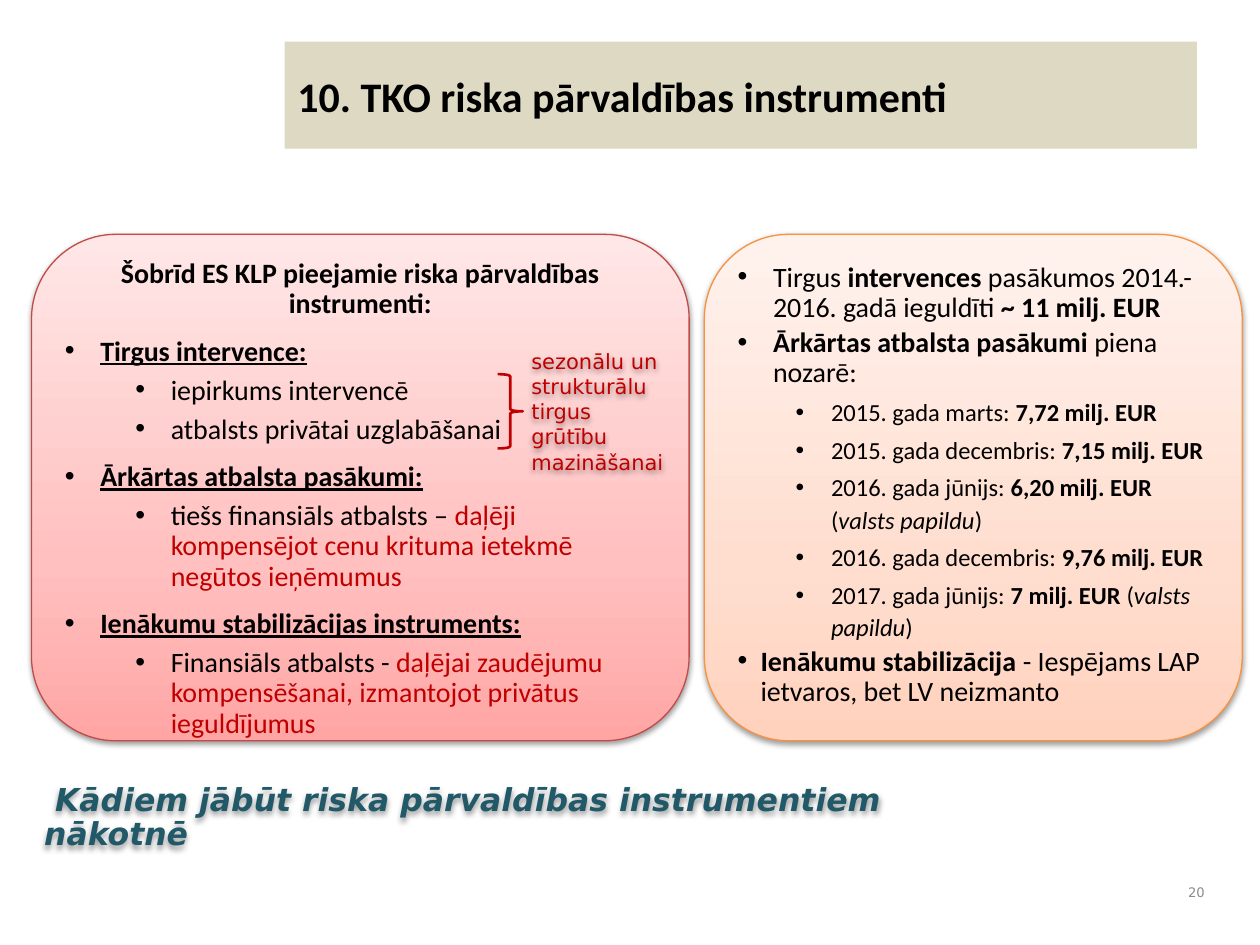
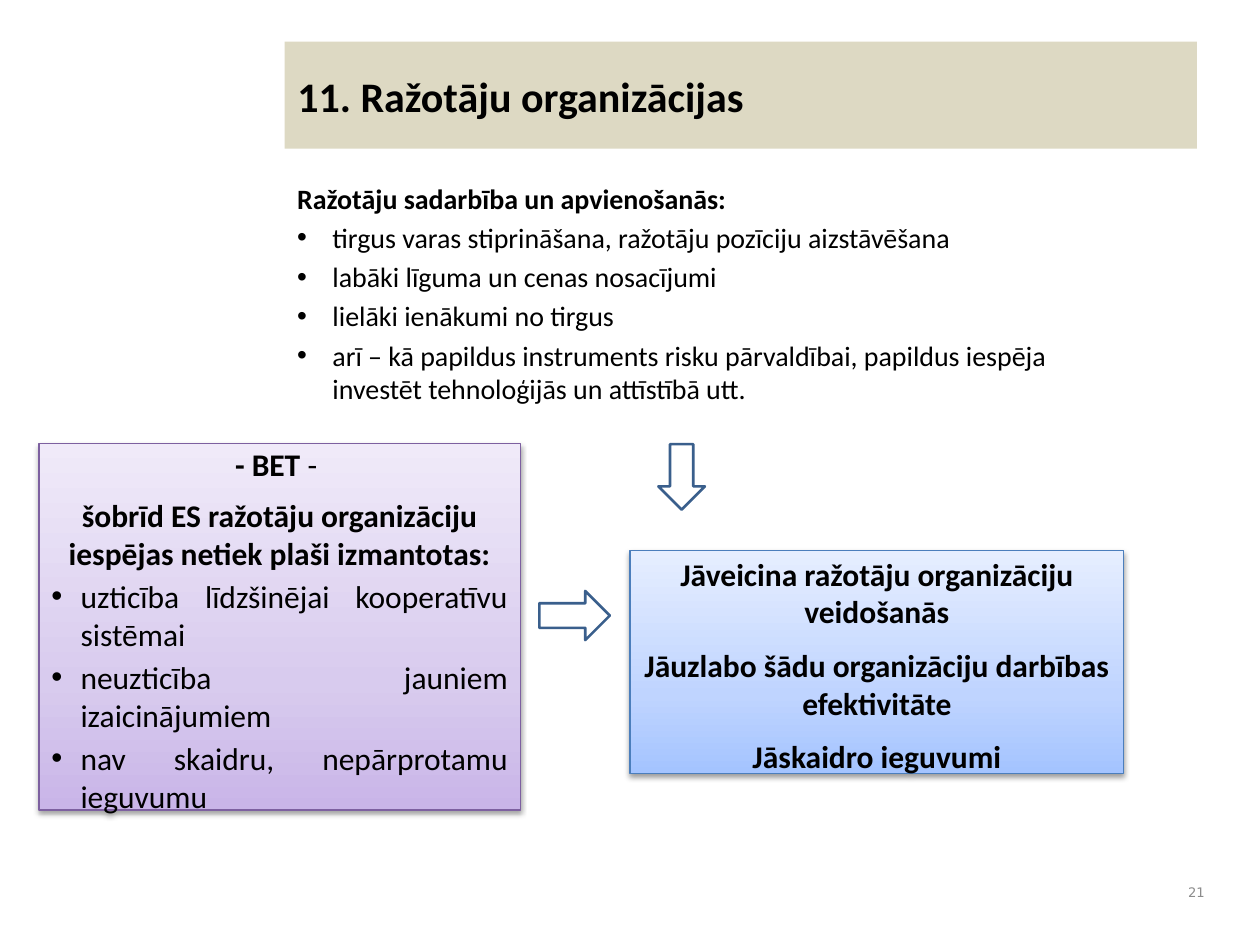
from copy import deepcopy

from lxml import etree
from pptx import Presentation
from pptx.dml.color import RGBColor
from pptx.enum import shapes, text
from pptx.oxml import ns
from pptx.util import Pt

KIND = shapes.MSO_SHAPE
ALIGN = text.PP_ALIGN
ANCHOR = text.MSO_ANCHOR

BLACK, RED, TEAL, GREY = "000000", "C00000", "215968", "8C8C8C"
SAND, NAVY = "DDD9C3", "3A5F8C"
BODY, PLAIN = "Calibri", "DejaVu Sans"

# Each tint: outline, then gradient colours from bottom to top
ROSE = ("BF4C48", "FFA6A5", "FFC0BF", "FFE7E7")
PEACH = ("F69240", "FFD2BD", "FFDED0", "FFF2ED")
LILAC = ("7D60A0", "C9B5E8", "D8CBEE", "F0EAF9")
SKY = ("4B7EBC", "A4C4FF", "BFD4FF", "E6EEFF")


def rgb(code):
    return RGBColor.from_string(code)


def add(parent, tag, **attrs):
    return etree.SubElement(parent, ns.qn(tag), attrs)


class Deck:
    def __init__(self):
        self.prs = Presentation()
        self.prs.slide_width, self.prs.slide_height = Pt(720), Pt(540)
        self.slide = None

    def start(self, title, number):
        """Open a slide with its title band and page number."""
        self.slide = self.prs.slides.add_slide(self.prs.slide_layouts[5])
        band = self.slide.shapes.title
        band.left, band.top, band.width, band.height = map(Pt, (162.7, 23.8, 521.3, 61.2))
        band.fill.solid()
        band.fill.fore_color.rgb = rgb(SAND)
        self.frame(band, anchor=ANCHOR.MIDDLE)
        self.para(band, title, size=24, bold=True)
        page = self.box(671.8, 498.2, 23.8, 23.8, (0, 3.6, 7.2, 3.6), ANCHOR.MIDDLE)
        self.para(page, str(number), size=7.5, font=PLAIN, color=GREY, align=ALIGN.RIGHT)

    def frame(self, shape, pad=(7.2, 3.6, 7.2, 3.6), anchor=ANCHOR.TOP):
        tf = shape.text_frame
        tf.word_wrap = True
        tf.auto_size = text.MSO_AUTO_SIZE.NONE
        tf.vertical_anchor = anchor
        tf.margin_left, tf.margin_top, tf.margin_right, tf.margin_bottom = map(Pt, pad)

    def box(self, x, y, w, h, *look):
        shape = self.slide.shapes.add_textbox(Pt(x), Pt(y), Pt(w), Pt(h))
        self.frame(shape, *look)
        return shape

    def shape(self, kind, x, y, w, h, line=None, turn=0):
        """Add an unfilled preset shape."""
        shape = self.slide.shapes.add_shape(kind, Pt(x), Pt(y), Pt(w), Pt(h))
        shape.shadow.inherit = False
        shape.rotation = turn
        shape.fill.background()
        if line:
            shape.line.color.rgb = rgb(line)
            shape.line.width = Pt(1.5)
        else:
            shape.line.fill.background()
        return shape

    def shade(self, shape):
        """Cast a soft shadow straight down."""
        effects = shape._element.spPr.find(ns.qn("a:effectLst"))
        outer = add(effects, "a:outerShdw", blurRad="40000", dist="20000",
                    dir="5400000", rotWithShape="0")
        add(add(outer, "a:srgbClr", val=BLACK), "a:alpha", val="38000")

    def panel(self, kind, x, y, w, h, tint, *look):
        """Add a shadowed shape with a three-stop gradient."""
        shape = self.shape(kind, x, y, w, h)
        edge, *tones = tint
        shape.line.color.rgb = rgb(edge)
        shape.line.width = Pt(0.75)
        shape.fill.gradient()
        shape.fill.gradient_angle = 90
        stops = shape._element.spPr.find(".//" + ns.qn("a:gsLst"))
        stops.insert(1, deepcopy(stops[0]))
        for stop, place, tone in zip(shape.fill.gradient_stops, (0, 0.35, 1), tones):
            stop.position = place
            stop.color.rgb = rgb(tone)
        self.shade(shape)
        self.frame(shape, *look)
        return shape

    def note(self, x, y, w, h, words, *look, **style):
        """Add shadowed text in an invisible rounded box."""
        shape = self.shape(KIND.ROUNDED_RECTANGLE, x, y, w, h)
        self.shade(shape)
        self.frame(shape, *look)
        self.para(shape, words, font=PLAIN, **style)

    def para(self, shape, words, size=16, font=BODY, color=BLACK, bold=False,
             italic=False, under=False, align=ALIGN.LEFT, left=0, hang=0,
             lead=1.0, before=0, after=0):
        """Add a paragraph; | parts runs, which open with * bold, _ italic, ^ red."""
        tf = shape.text_frame
        first = not tf.text
        p = tf.paragraphs[0] if first else tf.add_paragraph()
        p.alignment = align
        p.line_spacing = lead
        p.space_before = Pt(0 if first else before)
        p.space_after = Pt(after)
        props = p._p.get_or_add_pPr()
        props.set("marL", str(Pt(left)))
        props.set("indent", str(Pt(-hang)))
        if hang:
            add(props, "a:buFont", typeface="Arial")
            add(props, "a:buChar", char="•")
        else:
            add(props, "a:buNone")
        p.level = 1 if left > 36 else 0
        f = p.font
        f.size, f.name, f.bold, f.italic, f.underline = Pt(size), font, bold, italic, under
        f.color.rgb = rgb(color)
        for part in words.split("|"):
            run = p.add_run()
            run.text = part.lstrip("*_^")
            if part.startswith("*"):
                run.font.bold = True
            elif part.startswith("_"):
                run.font.italic = True
            elif part.startswith("^"):
                run.font.color.rgb = rgb(RED)


def risks(deck):
    deck.start("10. TKO riska pārvaldības instrumenti", 20)
    tools = deck.panel(KIND.ROUNDED_RECTANGLE, 18, 133.9, 375.8, 289.4, ROSE, (5, 0, 5, 2.9))
    deck.para(tools, "Šobrīd ES KLP pieejamie riska pārvaldības instrumenti:",
              bold=True, align=ALIGN.CENTER, lead=0.9)
    groups = {
        "Tirgus intervence:": ["iepirkums intervencē", "atbalsts privātai uzglabāšanai"],
        "Ārkārtas atbalsta pasākumi:": [
            "tiešs finansiāls atbalsts – |^daļēji kompensējot cenu krituma "
            "ietekmē negūtos ieņēmumus"],
        "Ienākumu stabilizācijas instruments:": [
            "Finansiāls atbalsts - |^daļējai zaudējumu kompensēšanai, "
            "izmantojot privātus ieguldījumus"],
    }
    for head, items in groups.items():
        deck.para(tools, head, bold=True, under=True, left=20.2, hang=20.2, lead=0.9, before=10)
        for item in items:
            deck.para(tools, item, left=60.5, hang=20.2, lead=0.9, before=5)

    deck.shape(KIND.RIGHT_BRACE, 284.4, 213.8, 14.4, 42.5, RED)
    deck.note(292.3, 191.5, 100.8, 87.1, "sezonālu un strukturālu tirgus grūtību mazināšanai",
              (7.2, 3.6, 7.2, 3.6), ANCHOR.MIDDLE, size=12, color=RED)
    deck.note(18, 442.8, 580.3, 46.8, " Kādiem jābūt riska pārvaldības instrumentiem nākotnē",
              (5, 2.9, 5, 2.9), size=18, color=TEAL, bold=True, italic=True, lead=0.9)

    funds = deck.panel(KIND.ROUNDED_RECTANGLE, 402.5, 133.9, 307.4, 289.4, PEACH,
                       (5, 2.2, 4.3, 0))
    main = dict(hang=20.2, lead=0.9, before=3)
    deck.para(funds, "Tirgus |*intervences| pasākumos 2014.-2016. gadā ieguldīti "
              "|*~ 11 milj. EUR", left=20.2, **main)
    deck.para(funds, "*Ārkārtas atbalsta pasākumi |piena nozarē:", left=20.2, **main)
    extra = "|(|_valsts papildu|)"
    for item in ("2015. gada marts: |*7,72 milj. EUR",
                 "2015. gada decembris: |*7,15 milj. EUR",
                 "2016. gada jūnijs: |*6,20 milj. EUR " + extra,
                 "2016. gada decembris: |*9,76 milj. EUR",
                 "2017. gada jūnijs: |*7 milj. EUR " + extra):
        deck.para(funds, item, size=14, left=53.3, hang=20.2, lead=1.1, before=3)
    deck.para(funds, "*Ienākumu stabilizācija| - Iespējams LAP ietvaros, bet LV neizmanto",
              left=13, **main)


def groups(deck):
    deck.start("11. Ražotāju organizācijas", 21)
    gains = deck.box(162.7, 100.1, 480.2, 118.8)
    deck.para(gains, "Ražotāju sadarbība un apvienošanās:", bold=True)
    for item in ("tirgus varas stiprināšana, ražotāju pozīciju aizstāvēšana",
                 "labāki līguma un cenas nosacījumi",
                 "lielāki ienākumi no tirgus",
                 "arī – kā papildus instruments risku pārvaldībai, papildus iespēja "
                 "investēt tehnoloģijās un attīstībā utt."):
        deck.para(gains, item, left=20.2, hang=20.2, before=3.2)

    look = ((7.2, 7, 7.2, 3.6), ANCHOR.MIDDLE)
    mid = dict(size=18, align=ALIGN.CENTER)
    doubts = deck.panel(KIND.RECTANGLE, 22.3, 253.4, 275, 209.5, LILAC, *look)
    deck.para(doubts, "*- BET| - ", after=4.5, **mid)
    deck.para(doubts, "šobrīd ES ražotāju organizāciju iespējas netiek plaši izmantotas:",
              bold=True, before=3, **mid)
    for item in ("uzticība līdzšinējai kooperatīvu sistēmai",
                 "neuzticība jauniem izaicinājumiem",
                 "nav skaidru, nepārprotamu ieguvumu"):
        deck.para(doubts, item, size=18, align=ALIGN.JUSTIFY, left=16.6, hang=16.6, before=3)

    deck.shape(KIND.RIGHT_ARROW, 308.2, 337.7, 40.3, 28.1, NAVY)
    deck.shape(KIND.RIGHT_ARROW, 370.8, 259.2, 37.4, 26.6, NAVY, turn=90)

    goals = deck.panel(KIND.RECTANGLE, 360, 314.6, 282.2, 127.4, SKY, *look)
    for goal in ("Jāveicina ražotāju organizāciju veidošanās",
                 "Jāuzlabo šādu organizāciju darbības efektivitāte",
                 "Jāskaidro ieguvumi"):
        deck.para(goals, goal, bold=True, before=4.5, after=4.5, **mid)


def main():
    deck = Deck()
    risks(deck)
    groups(deck)
    deck.prs.save("out.pptx")


if __name__ == "__main__":
    main()
